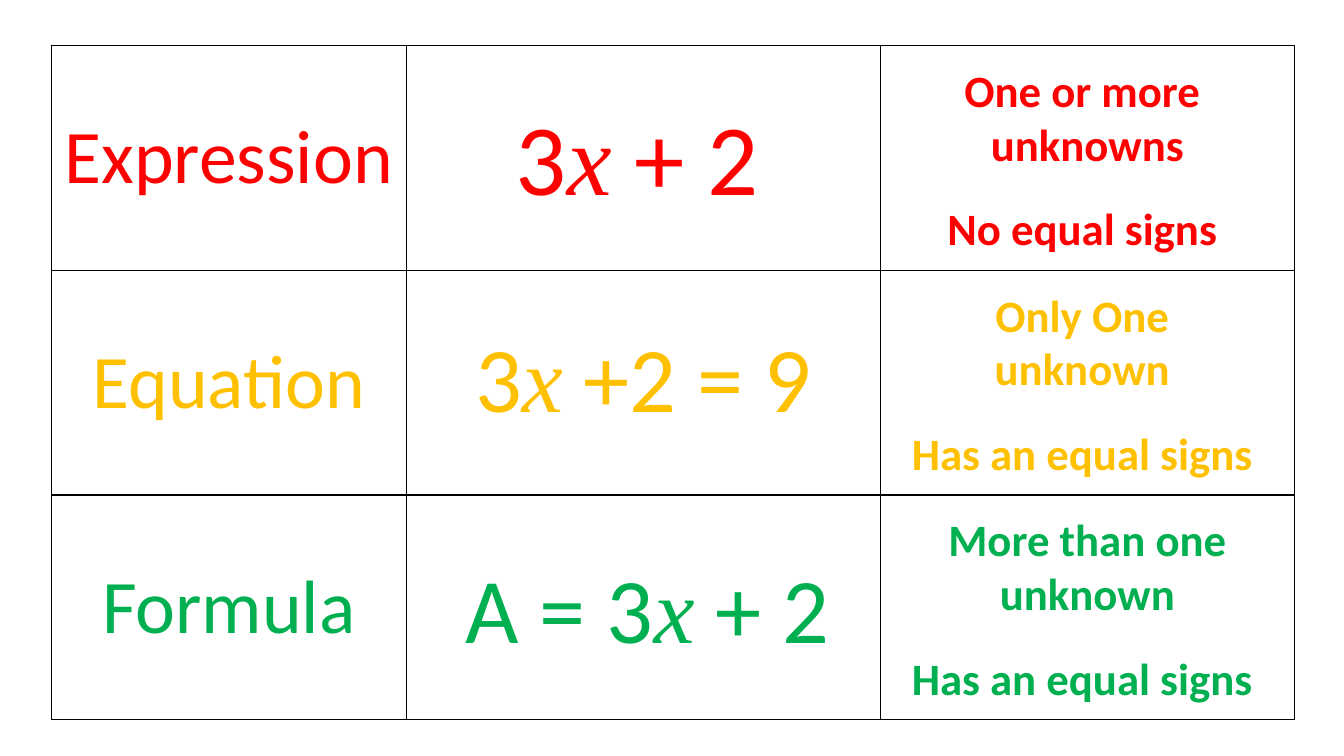
from lxml import etree
from pptx import Presentation
from pptx.dml.color import RGBColor
from pptx.enum.text import MSO_ANCHOR, PP_ALIGN
from pptx.oxml.ns import qn
from pptx.util import Inches, Pt

# Content: term, colour, formula runs, formula size, facts
ROWS = [
    ("Expression", "FF0000", ["3", "x", " + 2"], 72,
     ["One or more ", "unknowns", "No equal signs "]),
    ("Equation", "FFC000", ["3", "x", " +2 = 9"], 66,
     ["Only One ", "unknown ", "Has an equal signs "]),
    ("Formula", "00B050", ["A = 3", "x", " + 2"], 66,
     ["More than one unknown", "Has an equal signs "]),
]
# Formula boxes: width, height, shift from column centre, drop from row top
FORMULA_BOXES = [(2.67, 1.31, -0.06, 0.44), (3.8, 1.21, 0, 0.45), (3.88, 1.21, 0.04, 0.51)]

# Grid, in inches
LEFT, TOP = 0.51, 0.45
COLUMNS = [3.52, 4.7, 4.11]
ROW_HEIGHT = 2.23
FACTS_DROP, FACTS_HEIGHT = 0.12, 2.02


def colour(value):
    return RGBColor.from_string(value)


def style(para, size, shade, bold=False):
    para.alignment = PP_ALIGN.CENTER
    font = para.font
    font.name, font.size, font.bold = "Calibri", Pt(size), bold
    font.color.rgb = colour(shade)


def add_borders(cell):
    properties = cell._tc.get_or_add_tcPr()
    for position, side in enumerate(("lnL", "lnR", "lnT", "lnB")):
        line = etree.Element(qn(f"a:{side}"), w=str(Pt(1)))
        fill = etree.SubElement(line, qn("a:solidFill"))
        etree.SubElement(fill, qn("a:srgbClr"), val="000000")
        properties.insert(position, line)


def add_text_frame(left, top, width, height):
    box = page.shapes.add_textbox(*map(Inches, (left, top, width, height)))
    box.text_frame.word_wrap = True
    return box.text_frame


deck = Presentation()
deck.slide_width, deck.slide_height = Inches(13.33), Inches(7.5)
page = deck.slides.add_slide(deck.slide_layouts[6])

# Table with the terms in its first column
table = page.shapes.add_table(
    len(ROWS), len(COLUMNS), Inches(LEFT), Inches(TOP),
    Inches(sum(COLUMNS)), Inches(ROW_HEIGHT * len(ROWS))).table
table.first_row = table.horz_banding = False
for column, width in zip(table.columns, COLUMNS):
    column.width = Inches(width)
for row, (term, shade, *_) in zip(table.rows, ROWS):
    row.height = Inches(ROW_HEIGHT)
    for cell in row.cells:
        cell.fill.background()
        cell.vertical_anchor = MSO_ANCHOR.MIDDLE
        add_borders(cell)
    row.cells[0].text = term
    style(row.cells[0].text_frame.paragraphs[0], 54, shade)

formula_centre = LEFT + COLUMNS[0] + COLUMNS[1] / 2
facts_left = LEFT + COLUMNS[0] + COLUMNS[1]
for index, (_, shade, formula, size, facts) in enumerate(ROWS):
    row_top = TOP + index * ROW_HEIGHT

    # Formula with an italic unknown
    width, height, shift, drop = FORMULA_BOXES[index]
    frame = add_text_frame(formula_centre + shift - width / 2, row_top + drop, width, height)
    para = frame.paragraphs[0]
    style(para, size, shade)
    for text in formula:
        span = para.add_run()
        span.text = text
        if text == "x":
            span.font.name, span.font.italic = "Times New Roman", True

    # Facts, the last one set apart
    frame = add_text_frame(facts_left, row_top + FACTS_DROP, COLUMNS[2], FACTS_HEIGHT)
    for number, fact in enumerate(facts):
        para = frame.add_paragraph() if number else frame.paragraphs[0]
        para.text = fact
        style(para, 32, shade, bold=True)
    para.space_before = Pt(22)

deck.save("out.pptx")
